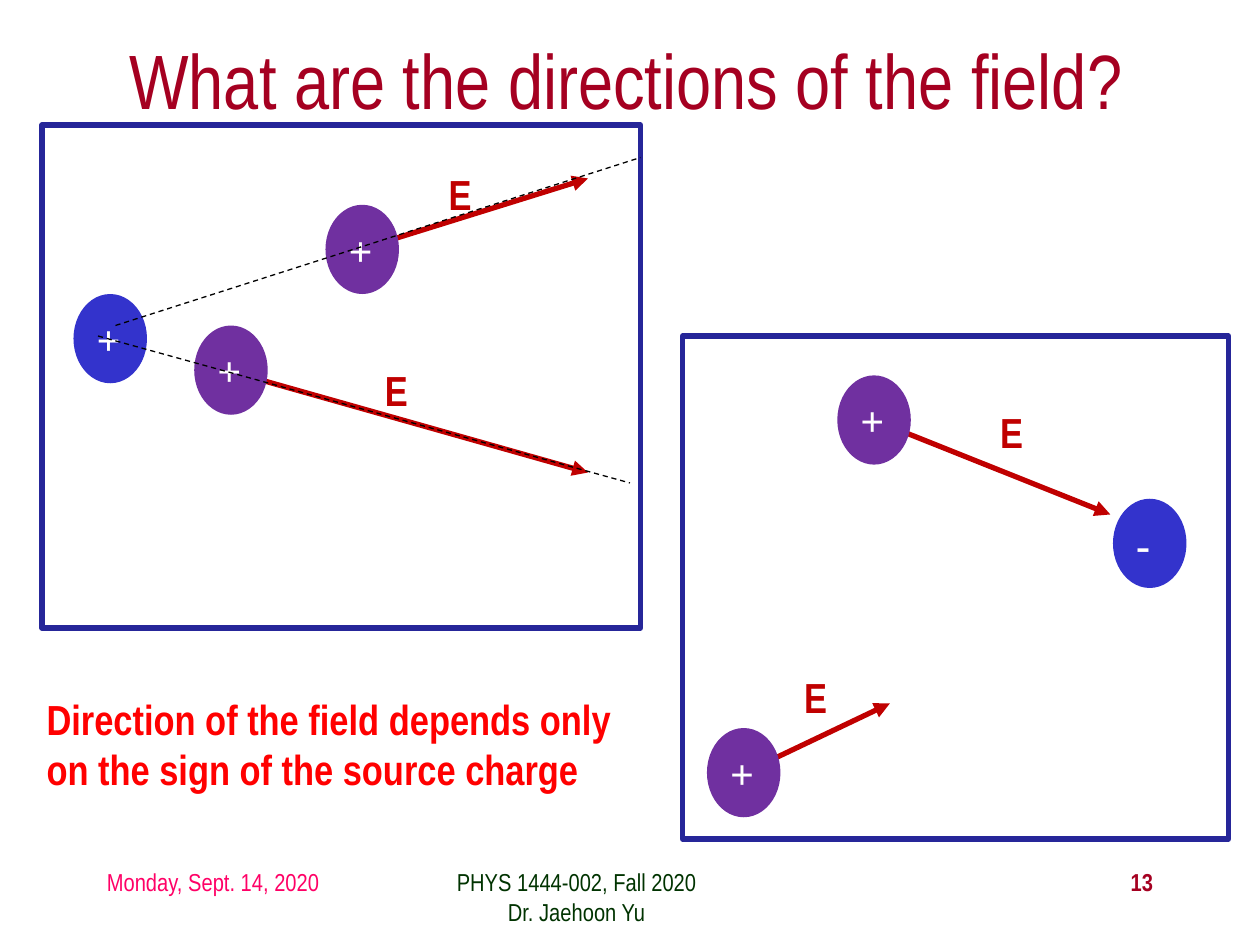
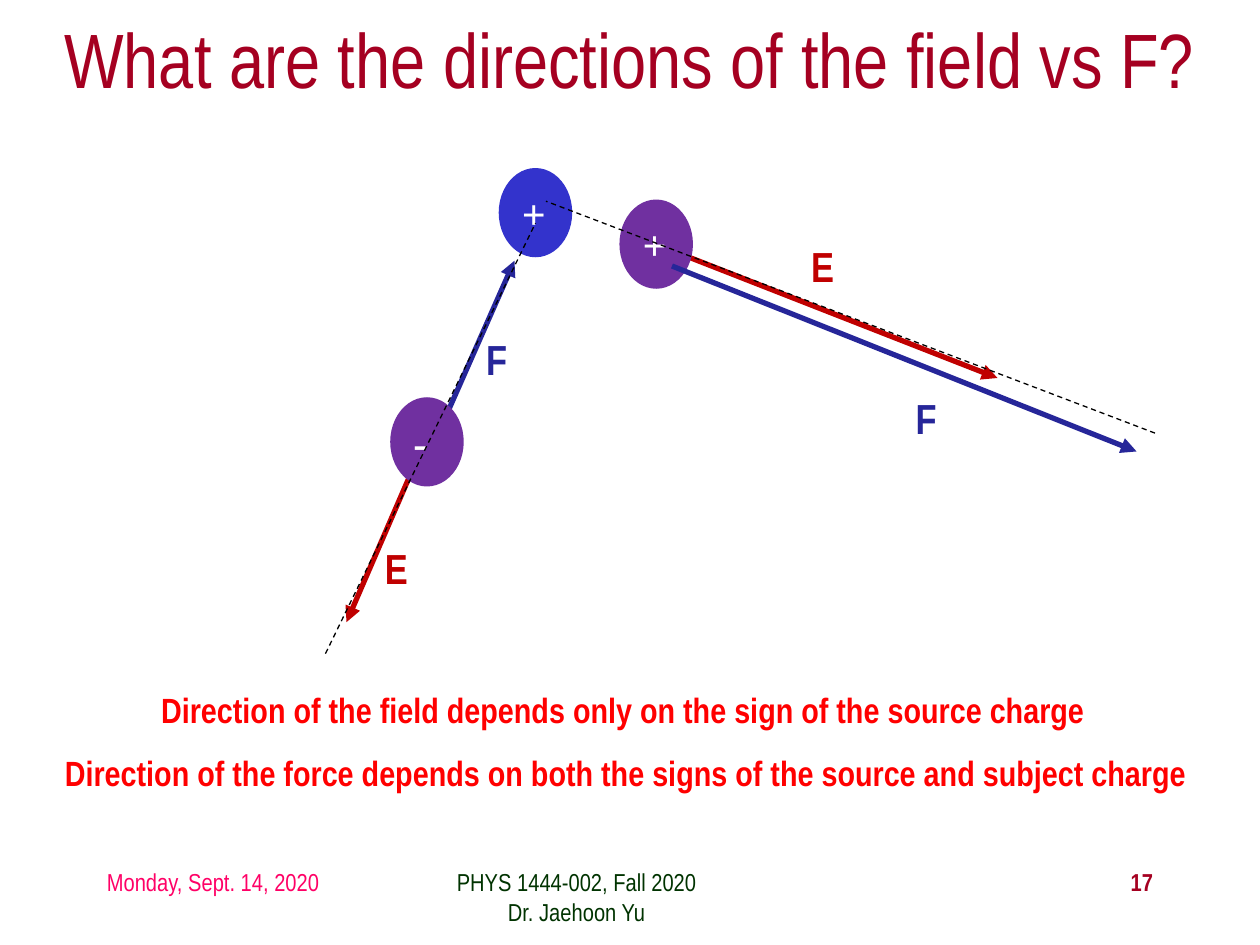
from dataclasses import dataclass

from lxml.etree import SubElement
from pptx import Presentation
from pptx.dml.color import RGBColor as RGB
from pptx.enum.dml import MSO_LINE
from pptx.enum.shapes import MSO_CONNECTOR as CONN, MSO_SHAPE as SHAPE
from pptx.enum.text import MSO_ANCHOR as ANCHOR, MSO_AUTO_SIZE as AUTO, PP_ALIGN as ALIGN
from pptx.oxml.ns import qn
from pptx.util import Pt


@dataclass(frozen=True)
class Theme:
    """Colours, fonts and type sizes that the slides share."""
    title: RGB = RGB.from_string("A50021")
    date: RGB = RGB.from_string("FF0066")
    course: RGB = RGB.from_string("003300")
    source: RGB = RGB.from_string("3333CC")
    subject: RGB = RGB.from_string("7030A0")
    field: RGB = RGB.from_string("C00000")
    force: RGB = RGB.from_string("262699")
    note: RGB = RGB.from_string("FF0000")
    black: RGB = RGB.from_string("000000")
    white: RGB = RGB.from_string("FFFFFF")
    text_font: str = "Arial Narrow"
    sign_font: str = "Times New Roman"
    title_size: float = 44
    label_size: float = 24
    note_size: float = 20
    footer_size: float = 14
    thick: float = 3
    thin: float = 0.75


T = Theme()


def box_pts(*values):
    """Turn plain numbers into point lengths."""
    return [Pt(v) for v in values]


def style(p, size, color, bold=False, align=ALIGN.LEFT, font=T.text_font):
    """Set the font and alignment of one paragraph."""
    p.alignment = align
    p.font.name, p.font.size, p.font.bold = font, Pt(size), bold
    p.font.color.rgb = color


def add_text(s, text, box, size, color, bold=True, align=ALIGN.LEFT, wrap=True, grow=True):
    """Add a text box and return its text frame."""
    tf = s.shapes.add_textbox(*box_pts(*box)).text_frame
    tf.word_wrap = wrap
    tf.auto_size = AUTO.SHAPE_TO_FIT_TEXT if grow else AUTO.NONE
    tf.text = text
    for p in tf.paragraphs:
        style(p, size, color, bold, align)
    return tf


def add_label(s, text, x, y):
    """Name a field (E) or force (F) arrow."""
    color = T.field if text == "E" else T.force
    add_text(s, text, (x, y, 28 if text == "E" else 26.5, 36), T.label_size, color,
             align=ALIGN.CENTER, wrap=False)


def add_charge(s, sign, x, y, color):
    """Draw a charge as an ellipse with its sign."""
    sp = s.shapes.add_shape(SHAPE.OVAL, *box_pts(x, y, 42, 51))
    sp.shadow.inherit = False
    sp.fill.solid()
    sp.fill.fore_color.rgb = color
    sp.line.fill.background()
    tf = sp.text_frame
    tf.word_wrap, tf.auto_size, tf.vertical_anchor = True, AUTO.SHAPE_TO_FIT_TEXT, ANCHOR.TOP
    tf.text = sign
    style(tf.paragraphs[0], T.label_size, T.white, True, font=T.sign_font)


def add_frame(s, *box):
    """Draw an unfilled frame around a field sketch."""
    sp = s.shapes.add_shape(SHAPE.RECTANGLE, *box_pts(*box))
    sp.shadow.inherit = False
    sp.fill.background()
    sp.line.color.rgb = T.force
    sp.line.width = Pt(T.thick)
    SubElement(sp.line._get_or_add_ln(), qn("a:round"))


def add_line(s, ends, color, width):
    """Draw a straight connector without a shadow."""
    c = s.shapes.add_connector(CONN.STRAIGHT, *box_pts(*ends))
    c.line.color.rgb = color
    c.line.width = Pt(width)
    SubElement(c._element.spPr, qn("a:effectLst"))
    return c


def add_vector(s, color, *ends):
    """Draw a thick arrow for a field or a force."""
    c = add_line(s, ends, color, T.thick)
    SubElement(c.line._get_or_add_ln(), qn("a:tailEnd"), type="triangle")


def add_axis(s, *ends):
    """Draw the dashed line through two charges."""
    add_line(s, ends, T.black, T.thin).line.dash_style = MSO_LINE.DASH


def add_slide(prs, title, box, number):
    """Add a slide with its title and footer."""
    s = prs.slides.add_slide(prs.slide_layouts[5])
    sp = s.shapes.title
    sp.left, sp.top, sp.width, sp.height = box_pts(*box)
    tf = sp.text_frame
    tf.text, tf.auto_size, tf.vertical_anchor = title, AUTO.NONE, ANCHOR.MIDDLE
    style(tf.paragraphs[0], T.title_size, T.title, align=ALIGN.CENTER)

    add_text(s, "Monday, Sept. 14, 2020", (54, 492, 150, 36), T.footer_size, T.date,
             bold=False, grow=False)
    course = add_text(s, "PHYS 1444-002, Fall 2020\nDr. Jaehoon Yu", (246, 492, 228, 36),
                      T.footer_size, T.course, bold=False, align=ALIGN.CENTER, grow=False)
    course.paragraphs[0]._p.get_or_add_pPr().set("marR", str(Pt(61)))
    add_text(s, str(number), (516, 492, 150, 36), T.footer_size, T.title,
             align=ALIGN.RIGHT, grow=False)
    return s


def build_field(prs):
    """Build the slide on the directions of the field."""
    s = add_slide(prs, "What are the directions of the field?", (52, 0, 612, 90), 13)

    add_charge(s, "-", 636, 285, T.source)
    add_vector(s, T.field, 425.5, 441.5, 508.5, 402)
    add_charge(s, "+", 404, 416, T.subject)
    add_vector(s, T.field, 505.5, 242.5, 634.5, 294)
    add_charge(s, "+", 478.5, 214.5, T.subject)
    add_frame(s, 390, 192, 312, 287.5)

    add_charge(s, "+", 42, 168, T.source)
    add_vector(s, T.field, 207.5, 142, 336, 102)
    add_vector(s, T.field, 138, 214, 336, 270)
    add_charge(s, "+", 186, 117, T.subject)
    add_charge(s, "+", 111, 186, T.subject)
    add_frame(s, 24, 71.5, 342, 287.5)

    for x, y in ((249, 93), (212.5, 204.5), (564, 229), (452, 380)):
        add_label(s, "E", x, y)
    add_axis(s, 56, 192, 360, 276)
    add_axis(s, 66, 186, 366, 90)
    add_text(s, "Direction of the field depends only on the sign of the source charge",
             (19.5, 392.5, 342, 65.5), T.label_size, T.note)


def build_field_and_force(prs):
    """Build the slide that compares field and force."""
    s = add_slide(prs, "What are the directions of the field vs F?", (6, -12, 708, 90), 17)

    add_charge(s, "+", 285, 96, T.source)
    add_vector(s, T.field, 381, 142, 570, 216)
    add_charge(s, "+", 354, 114, T.subject)
    add_vector(s, T.force, 384, 152, 649.5, 258)
    add_vector(s, T.field, 240, 258.5, 198, 355.5)
    add_vector(s, T.force, 247, 255.5, 294, 149)
    add_charge(s, "-", 223, 227, T.subject)

    for text, x, y in (("E", 456, 134), ("E", 212.5, 306.5), ("F", 516, 221), ("F", 270.5, 187)):
        add_label(s, text, x, y)
    add_axis(s, 186, 373.5, 306, 127.5)
    add_axis(s, 660, 247.5, 312, 115)

    notes = (
        ("Direction of the field depends only on the sign of the source charge", 85, 390, 545),
        ("Direction of the force depends on both the signs of the source and subject charge",
         30, 426, 672.5),
    )
    for text, x, y, width in notes:
        add_text(s, text, (x, y, width, 31.5), T.note_size, T.note, wrap=False)


def main():
    """Build and save the presentation."""
    prs = Presentation()
    prs.slide_width, prs.slide_height = Pt(720), Pt(540)
    build_field(prs)
    build_field_and_force(prs)
    prs.save("out.pptx")


if __name__ == "__main__":
    main()
